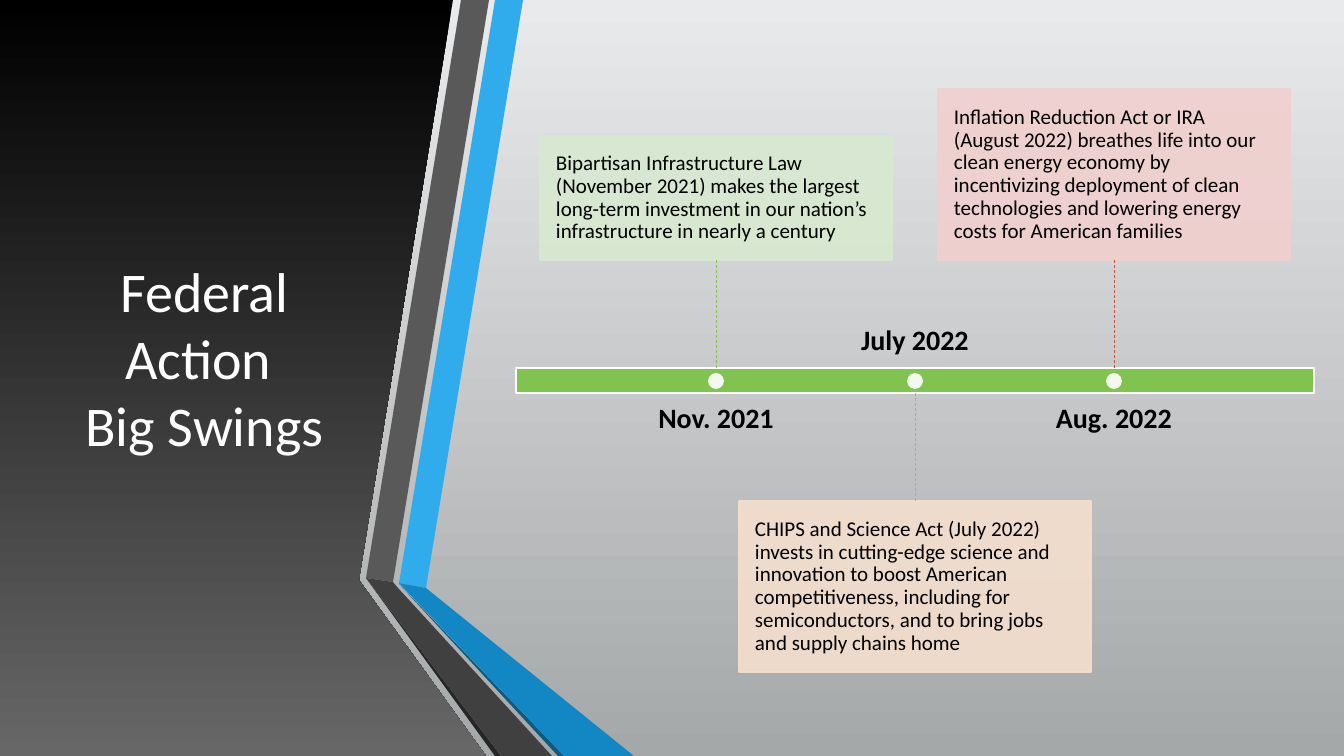
"""Builds the timeline slide on three federal acts."""
from lxml.etree import SubElement
from pptx import Presentation
from pptx.dml.color import RGBColor
from pptx.enum.dml import MSO_LINE
from pptx.enum.shapes import MSO_CONNECTOR, MSO_SHAPE
from pptx.enum.text import MSO_ANCHOR, PP_ALIGN
from pptx.oxml.ns import qn
from pptx.util import Pt

PX = 914400 / 100.8
COLORS = {
    "sky top": "E9EAEB", "sky bottom": "A5A8A9",
    "panel": "000000", "panel bottom": "676767",
    "blue band": "30ACEC", "grey band": "595959",
    "grey edge": "262626", "blue edge": "0C5A82",
    "blue fold": "1287C3", "grey fold": "404040",
    "bar": "80C34F", "white": "FFFFFF", "black": "000000",
    "law": "D8E9D0", "law line": "80C34F",
    "chips": "F4DFCE", "chips line": "E29D3E",
    "ira": "F0D0CE", "ira line": "D64A3B",
}
RGB = {name: RGBColor.from_string(value) for name, value in COLORS.items()}


def emu(*lengths):
    return [round(length * PX) for length in lengths]


def write(shape, text, size, color, align, anchor, inset, spacing=1.0, bold=False):
    frame = shape.text_frame
    frame.word_wrap = True
    frame.vertical_anchor = anchor
    frame.margin_left, frame.margin_top, frame.margin_right, frame.margin_bottom = emu(*[inset] * 4)
    paragraph = frame.paragraphs[0]
    paragraph.text = text
    paragraph.alignment = align
    paragraph.line_spacing = spacing
    for run in paragraph.runs:
        run.font.name = "Calibri"
        run.font.size = Pt(size)
        run.font.bold = bold
        run.font.color.rgb = RGB[color]


prs = Presentation()
prs.slide_width, prs.slide_height = emu(1344, 756)
slide = prs.slides.add_slide(prs.slide_layouts[6])
shapes = slide.shapes

outlines = {
    "panel": [(0, 0), (453, 0), (359, 580), (486, 756), (0, 756)],
    "blue band": [(399, 583), (426, 588), (523, 0), (495, 0)],
    "grey band": [(489, 0), (461, 0), (366, 578), (393, 582)],
    "grey edge": [(366, 578), (495, 756), (501, 756)],
    "blue edge": [(399, 584), (558, 756), (564, 756)],
    "blue fold": [(399, 583), (564, 756), (634, 756), (426, 588)],
    "grey fold": [(552, 756), (398, 588), (393, 582), (366, 578), (501, 756)],
}
facets = {}
for name, points in outlines.items():
    builder = shapes.build_freeform(*points[0], scale=PX)
    builder.add_line_segments(points[1:], close=True)
    facet = builder.convert_to_shape()
    facet.shadow.inherit = False
    facet.fill.solid()
    facet.fill.fore_color.rgb = RGB[name]
    facet.line.fill.background()
    facets[name] = facet

for fill, top, bottom in (
    (slide.background.fill, "sky top", "sky bottom"),
    (facets["panel"].fill, "panel", "panel bottom"),
):
    fill.gradient()
    fill.gradient_angle = 270
    for stop, color in zip(fill.gradient_stops, (top, bottom)):
        stop.color.rgb = RGB[color]

title = shapes.add_textbox(*emu(59, 76, 291, 562))
write(title, "Federal Action \vBig Swings", 40, "white", PP_ALIGN.CENTER, MSO_ANCHOR.MIDDLE, 10)

BAR_LEFT, BAR_TOP, BAR_WIDTH, BAR_HEIGHT = 516, 368, 798, 25
CARD_WIDTH, LABEL_WIDTH, LABEL_HEIGHT, DOT = 352, 318, 72, 16
MIDDLE, STEP = BAR_LEFT + BAR_WIDTH // 2, 199

bar = shapes.add_shape(MSO_SHAPE.RECTANGLE, *emu(BAR_LEFT, BAR_TOP, BAR_WIDTH, BAR_HEIGHT))
bar.shadow.inherit = False
bar.fill.solid()
bar.fill.fore_color.rgb = RGB["bar"]
bar.line.color.rgb = RGB["white"]
bar.line.width = Pt(1.25)

milestones = [
    ("law", "Nov. 2021", 136, 124, True,
     "Bipartisan Infrastructure Law (November 2021) makes the largest long-term "
     "investment in our nation’s infrastructure in nearly a century"),
    ("chips", "July 2022", 501, 171, False,
     "CHIPS and Science Act (July 2022) invests in cutting-edge science and innovation "
     "to boost American competitiveness, including for semiconductors, and to bring "
     "jobs and supply chains home"),
    ("ira", "Aug. 2022", 89, 171, True,
     "Inflation Reduction Act or IRA (August 2022) breathes life into our clean energy "
     "economy by incentivizing deployment of clean technologies and lowering energy "
     "costs for American families"),
]
for index, (act, date, card_top, card_height, above, summary) in enumerate(milestones):
    center = MIDDLE + (index - 1) * STEP

    card = shapes.add_shape(
        MSO_SHAPE.RECTANGLE, *emu(center - CARD_WIDTH // 2, card_top, CARD_WIDTH, card_height))
    card.fill.solid()
    card.fill.fore_color.rgb = RGB[act]
    card.line.color.rgb = RGB[act]
    card.line.width = Pt(1.25)

    dot = shapes.add_shape(
        MSO_SHAPE.OVAL, *emu(center - DOT // 2, BAR_TOP + 5, DOT, DOT))
    dot.fill.solid()
    dot.fill.fore_color.rgb = RGB["white"]
    dot.line.fill.background()

    for shape in (card, dot):
        shape.shadow.inherit = False
        for tint in shape._element.spPr.iter(qn("a:srgbClr")):
            SubElement(tint, qn("a:alpha"), val="90000")
    write(card, summary, 15, "black", PP_ALIGN.LEFT, MSO_ANCHOR.MIDDLE, 16, 0.9)

    label_top = 404 if above else 285
    label = shapes.add_textbox(
        *emu(center - LABEL_WIDTH // 2, label_top, LABEL_WIDTH, LABEL_HEIGHT))
    label_anchor = MSO_ANCHOR.TOP if above else MSO_ANCHOR.BOTTOM
    write(label, date, 20, "black", PP_ALIGN.CENTER, label_anchor, 0, 0.9, bold=True)

    card_edge = card_top + card_height if above else card_top
    bar_edge = BAR_TOP if above else BAR_TOP + BAR_HEIGHT
    stem = shapes.add_connector(
        MSO_CONNECTOR.STRAIGHT, *emu(center, card_edge, center, bar_edge))
    stem.begin_connect(card, 2 if above else 0)
    if center == MIDDLE:
        stem.end_connect(bar, 2)
    stem.line.color.rgb = RGB[act + " line"]
    stem.line.width = Pt(0.5)
    stem.line.dash_style = MSO_LINE.DASH
    SubElement(stem._element.spPr, qn("a:effectLst"))

prs.save("out.pptx")
